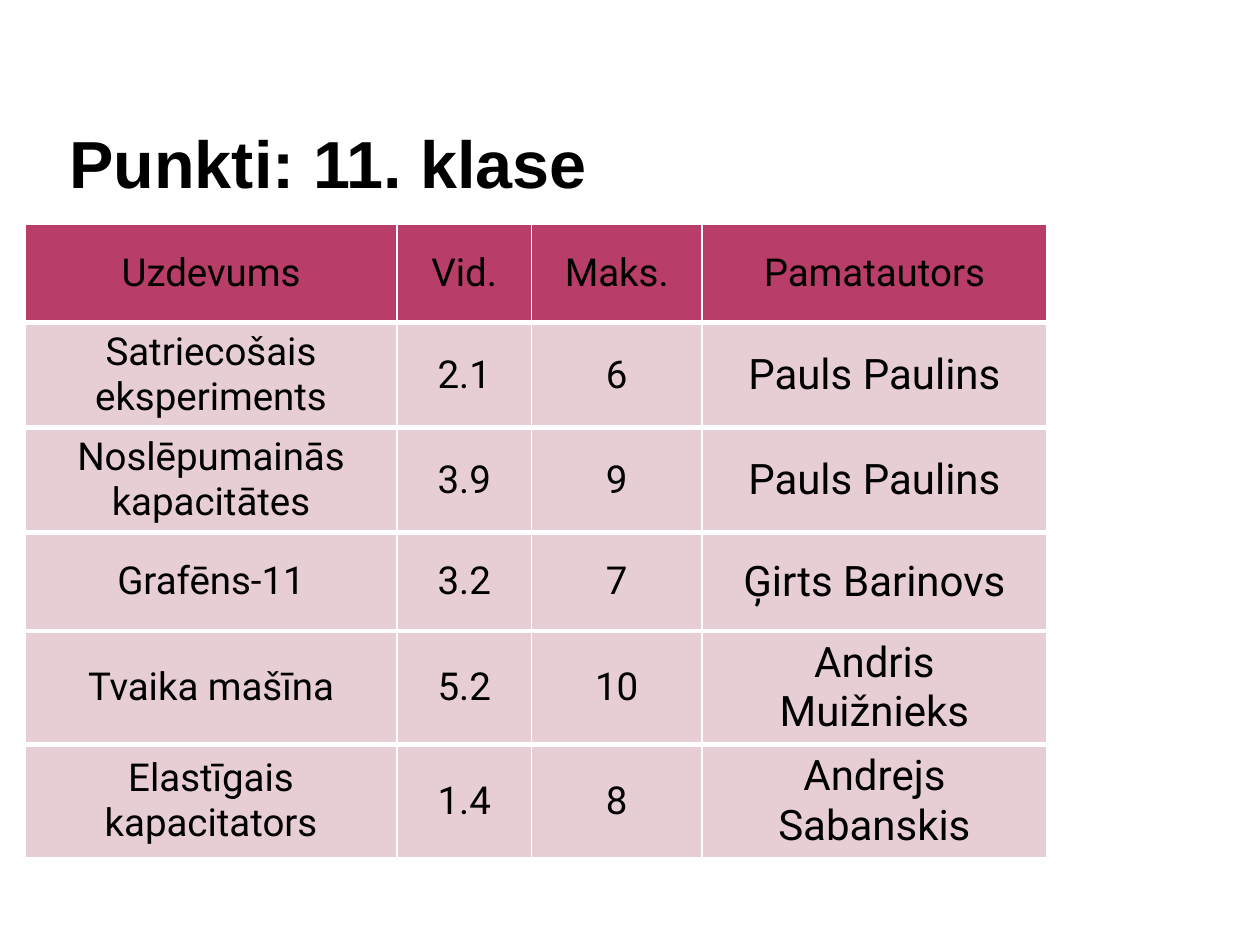
from lxml.etree import SubElement
from pptx import Presentation
from pptx.dml.color import RGBColor
from pptx.enum.text import MSO_ANCHOR, PP_ALIGN
from pptx.oxml.ns import qn
from pptx.util import Inches, Pt

# Content
TITLE = "Punkti: 11. klase"
ROWS = [
    ("Uzdevums", "Vid.", "Maks.", "Pamatautors"),
    ("Satriecošais eksperiments", "2.1", "6", "Pauls Paulins"),
    ("Noslēpumainās kapacitātes", "3.9", "9", "Pauls Paulins"),
    ("Grafēns-11", "3.2", "7", "Ģirts Barinovs"),
    ("Tvaika mašīna", "5.2", "10", "Andris Muižnieks"),
    ("Elastīgais kapacitators", "1.4", "8", "Andrejs Sabanskis"),
]

# Format
COLORS = {"text": "000000", "header": "B83D68", "body": "E6CED4", "border": "FFFFFF"}
COLUMN_WIDTHS = (2.95, 1.07, 1.35, 2.74)
ROW_HEIGHT = 0.78
THIN, THICK = 1, 3


def write(frame, text, size, font="Roboto", bold=False, align=PP_ALIGN.CENTER):
    para = frame.paragraphs[0]
    para.alignment = align
    span = para.add_run()
    span.text = text
    span.font.size = Pt(size)
    span.font.name = font
    span.font.bold = bold
    span.font.color.rgb = RGBColor.from_string(COLORS["text"])


def set_borders(cell, **widths):
    properties = cell._tc.get_or_add_tcPr()
    for position, side in enumerate(("L", "R", "T", "B")):
        line = properties.makeelement(qn(f"a:ln{side}"), w=str(Pt(widths[side])))
        fill = SubElement(line, qn("a:solidFill"))
        SubElement(fill, qn("a:srgbClr"), val=COLORS["border"])
        properties.insert(position, line)


deck = Presentation()
deck.slide_width, deck.slide_height = Inches(10), Inches(7.5)
page = deck.slides.add_slide(deck.slide_layouts[6])

# Title
box = page.shapes.add_textbox(Inches(0.5), Inches(0.35), Inches(7.92), Inches(1.25))
frame = box.text_frame
frame.word_wrap = True
frame.vertical_anchor = MSO_ANCHOR.BOTTOM
frame.margin_left = frame.margin_right = Inches(0.05)
frame.margin_top = frame.margin_bottom = 0
write(frame, TITLE, 38, font="Arial", bold=True, align=PP_ALIGN.LEFT)

# Score table
table = page.shapes.add_table(
    len(ROWS), len(COLUMN_WIDTHS), Inches(0.2), Inches(1.78),
    Inches(sum(COLUMN_WIDTHS)), Inches(ROW_HEIGHT * len(ROWS)),
).table
for column, width in zip(table.columns, COLUMN_WIDTHS):
    column.width = Inches(width)

last_row, author_column = len(ROWS) - 1, len(COLUMN_WIDTHS) - 1
for r, values in enumerate(ROWS):
    table.rows[r].height = Inches(ROW_HEIGHT)
    for c, value in enumerate(values):
        cell = table.cell(r, c)
        cell.vertical_anchor = MSO_ANCHOR.MIDDLE
        cell.fill.solid()
        cell.fill.fore_color.rgb = RGBColor.from_string(COLORS["body" if r else "header"])
        write(cell.text_frame, value, 24 if r and c == author_column else 22)
        set_borders(cell, L=THIN, R=THIN, T=THICK if r else THIN,
                    B=THIN if r == last_row else THICK)

deck.save("out.pptx")
